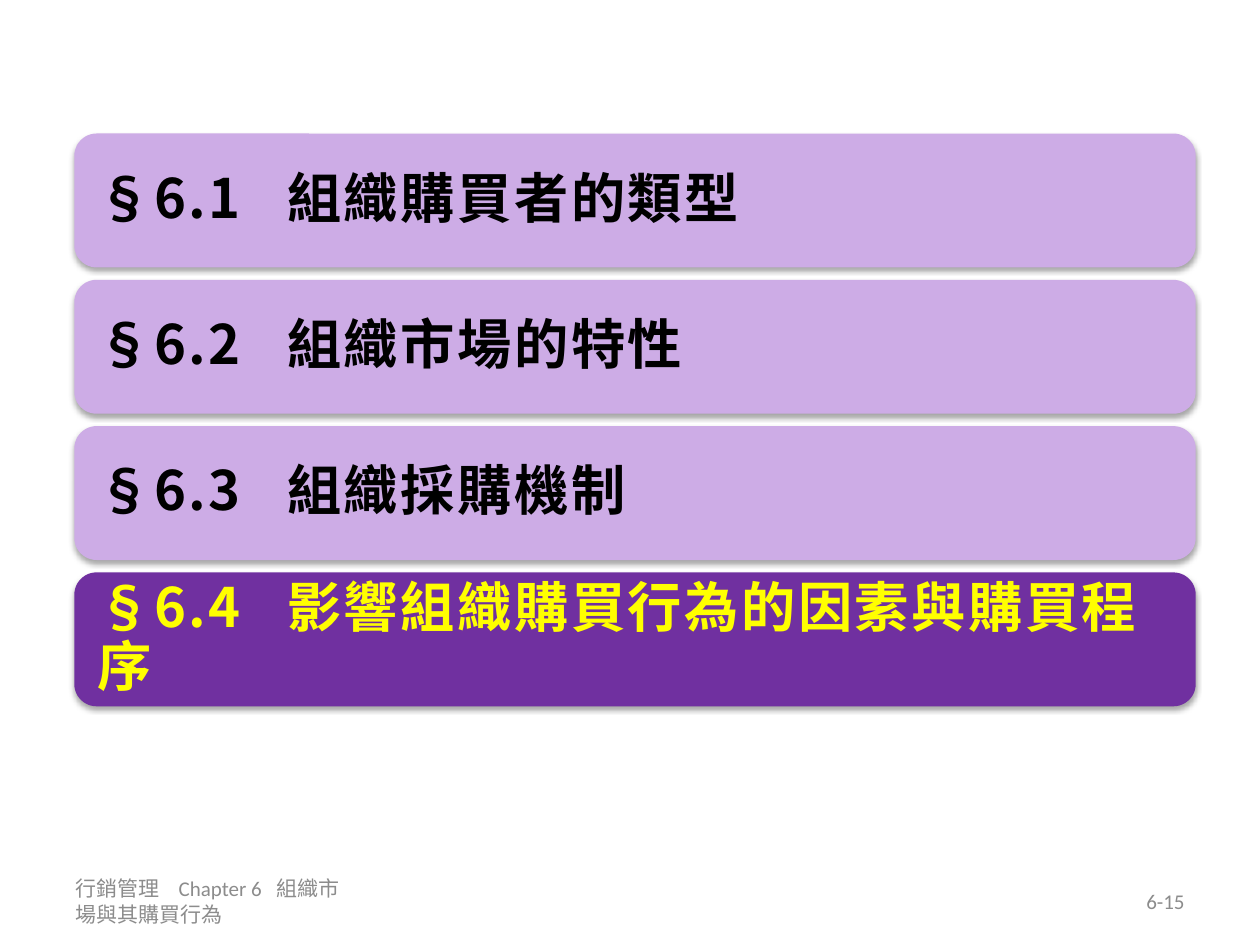
from dataclasses import dataclass

from lxml import etree
from pptx import Presentation
from pptx.dml.color import RGBColor
from pptx.enum.shapes import MSO_SHAPE
from pptx.enum.text import MSO_ANCHOR, PP_ALIGN
from pptx.oxml.ns import qn
from pptx.util import Pt

ROUND = MSO_SHAPE.ROUNDED_RECTANGLE
MIDDLE = MSO_ANCHOR.MIDDLE
LEFT, RIGHT = PP_ALIGN.LEFT, PP_ALIGN.RIGHT


@dataclass(frozen=True)
class Theme:
    bar: str = "CDACE6"
    bar_on: str = "7030A0"
    ink: str = "000000"
    ink_on: str = "FFFF00"
    gray: str = "8C8C8C"
    shade: str = "000000"
    head: str = "Noto Sans CJK SC"
    body: str = "Calibri"
    head_size: int = 31
    foot_size: int = 12


def assign(target, values):
    for name, value in values.items():
        setattr(target, name, value)


def child(parent, tag, **values):
    node = etree.SubElement(parent, qn(tag))
    for name, value in values.items():
        node.set(name, str(value))
    return node


class Deck:
    """Holds the theme and the current slide."""

    def __init__(self, slide, theme):
        self.slide = slide
        self.theme = theme

    def label(self, shape, text, font, color, align=LEFT, tabs=()):
        """Put one line of text into a shape, with tab stops in points."""
        assign(shape.text_frame, {"word_wrap": True, "vertical_anchor": MIDDLE})
        para = shape.text_frame.paragraphs[0]
        if tabs:
            stops = child(para._p.get_or_add_pPr(), "a:tabLst")
            for stop in tabs:
                child(stops, "a:tab", pos=int(Pt(stop)), algn="l")
        para.alignment = align
        run = para.add_run()
        run.text = text
        assign(run.font, font)
        run.font.color.rgb = RGBColor.from_string(color)
        child(run._r.get_or_add_rPr(), "a:ea", typeface=self.theme.head)
        return para, run

    def shadow(self, shape):
        """Give a shape a soft shadow straight below it."""
        shape.shadow.inherit = False
        effects = shape._element.spPr.find(qn("a:effectLst"))
        outer = child(effects, "a:outerShdw", blurRad=int(Pt(3.1)),
                      dist=int(Pt(1.8)), dir=90 * 60000, rotWithShape=0)
        color = child(outer, "a:srgbClr", val=self.theme.shade)
        child(color, "a:alpha", val=35000)

    def bar(self, box, text, active):
        """Draw one section bar; the active one stands out."""
        look = self.theme
        shape = self.slide.shapes.add_shape(ROUND, *map(Pt, box))
        shape.fill.solid()
        fill = look.bar_on if active else look.bar
        shape.fill.fore_color.rgb = RGBColor.from_string(fill)
        shape.line.fill.background()
        self.shadow(shape)
        sides = ("left", "top", "right", "bottom")
        assign(shape.text_frame, {f"margin_{side}": Pt(9.4) for side in sides})
        font = {"name": look.head, "size": Pt(look.head_size), "bold": True}
        para, run = self.label(shape, text, font,
                               look.ink_on if active else look.ink, tabs=(108.5,))
        para.line_spacing = 0.9
        run._r.get_or_add_rPr().set("spc", "150")

    def foot(self, box, text, align=LEFT, tabs=()):
        """Add a footer text."""
        look = self.theme
        shape = self.slide.shapes.add_textbox(*map(Pt, box))
        font = {"name": look.body, "size": Pt(look.foot_size)}
        self.label(shape, text, font, look.gray, align, tabs)


def main():
    show = Presentation()
    assign(show, {"slide_width": Pt(720), "slide_height": Pt(540)})
    deck = Deck(show.slides.add_slide(show.slide_layouts[6]), Theme())

    # Footer and page number
    deck.foot((36, 500.5, 168, 28.8), "行銷管理\tChapter 6\t組織市場與其購買行為",
              tabs=(59, 115))
    deck.foot((516, 500.5, 168, 28.8), "6-15", RIGHT)

    # Section bars, the last one active
    names = ("組織購買者的類型", "組織市場的特性", "組織採購機制",
             "影響組織購買行為的因素與購買程序")
    top, high, pitch = 76.3, 76.5, 83.6
    for row, name in enumerate(names):
        deck.bar((42.5, top + row * pitch, 640.8, high),
                 f"§6.{row + 1}\t{name}", row == len(names) - 1)

    show.save("out.pptx")


if __name__ == "__main__":
    main()
